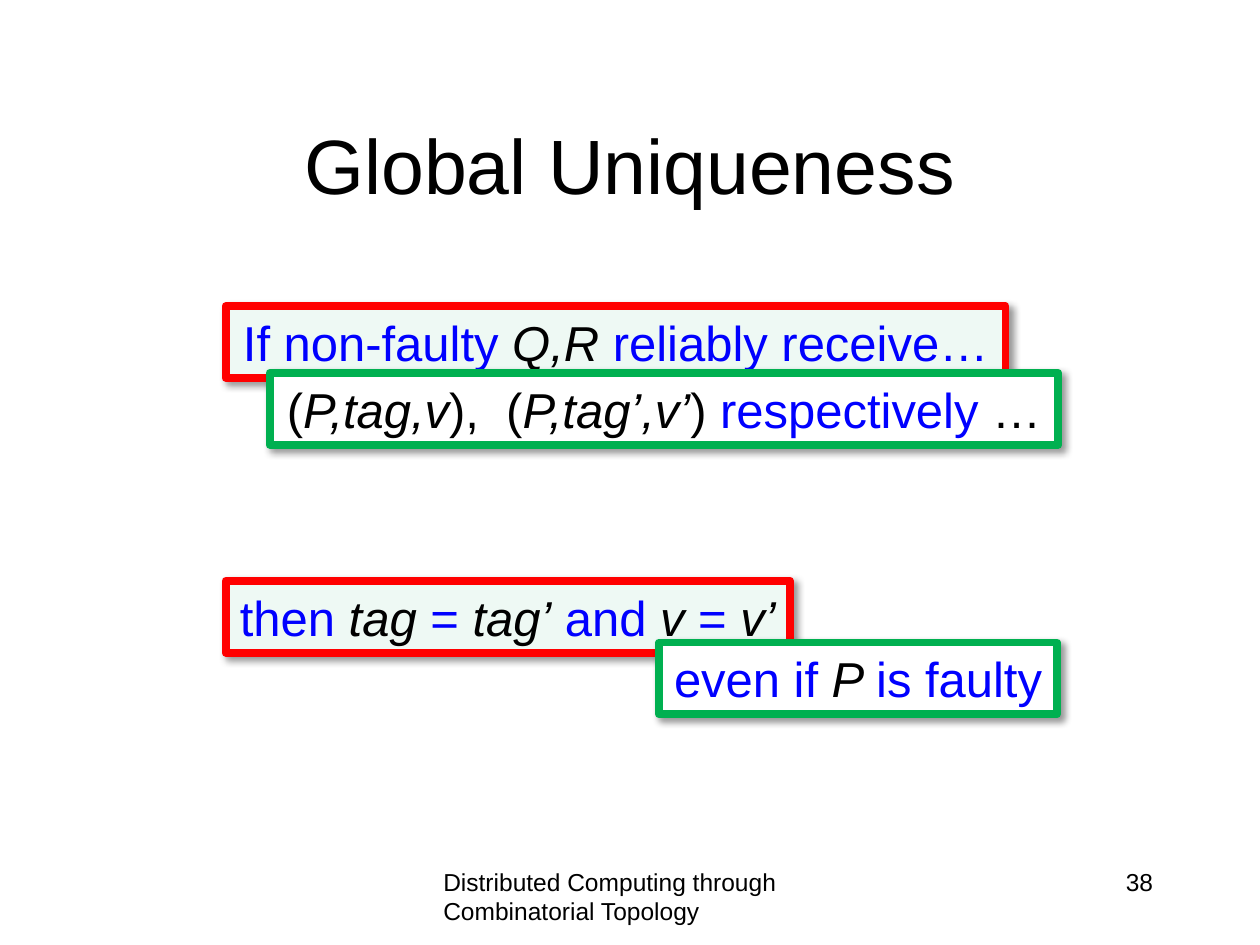
from dataclasses import dataclass

import pptx
import pptx.dml.color
import pptx.enum.shapes
import pptx.enum.text
import pptx.oxml
import pptx.oxml.ns
import pptx.util
from pptx.util import Inches

ALIGN = pptx.enum.text.PP_ALIGN
ANCHOR = pptx.enum.text.MSO_ANCHOR
BLACK, BLUE, RED, GREEN = "000000", "0000FF", "FF0000", "00B050"
MINT, WHITE = "EEF9F4", "FFFFFF"


@dataclass(frozen=True)
class Span:
    text: str
    color: str = BLACK
    italic: bool = False


@dataclass(frozen=True)
class Callout:
    left: float
    top: float
    width: float
    fill: str
    border: str
    spans: tuple[Span, ...]


def words(text: str) -> Span:
    return Span(text, BLUE)


def symbol(text: str) -> Span:
    return Span(text, italic=True)


CALLOUTS = (
    Callout(1.79, 2.43, 6.19, MINT, RED, (
        words("If non-faulty "), symbol("Q,R"), words(" reliably receive…"))),
    Callout(1.79, 4.61, 4.48, MINT, RED, (
        words("then "), symbol("tag"), words(" = "), symbol("tag’"),
        words(" and "), symbol("v"), words(" = "), symbol("v’"))),
    Callout(5.23, 5.1, 3.16, WHITE, GREEN, (
        words("even if "), symbol("P "), words("is faulty"))),
    Callout(2.14, 2.96, 6.26, WHITE, GREEN, (
        Span("("), symbol("P,tag,v"), Span("),  ("), symbol("P,tag’,v’"),
        Span(") "), words("respectively "), Span("…"))),
)


def rgb(color: str) -> pptx.dml.color.RGBColor:
    return pptx.dml.color.RGBColor.from_string(color)


def write(frame, *spans: Span, size: float, align=ALIGN.LEFT,
          anchor=ANCHOR.TOP, wrap: bool = True) -> None:
    frame.word_wrap = wrap
    frame.vertical_anchor = anchor
    para = frame.paragraphs[0]
    para.alignment = align
    for span in spans:
        run = para.add_run()
        run.text = span.text
        run.font.name = "Arial"
        run.font.size = pptx.util.Pt(size)
        run.font.italic = span.italic
        run.font.color.rgb = rgb(span.color)


def add_text(page, text: str, left: float, top: float, width: float,
             height: float, **style) -> None:
    box = page.shapes.add_textbox(
        Inches(left), Inches(top), Inches(width), Inches(height))
    write(box.text_frame, Span(text), **style)


def add_shadow(box) -> None:
    box.shadow.inherit = False
    effects = box._element.spPr.find(pptx.oxml.ns.qn("a:effectLst"))
    effects.append(pptx.oxml.parse_xml(
        f'<a:outerShdw {pptx.oxml.ns.nsdecls("a")} blurRad="{pptx.util.Pt(4)}" '
        f'dist="{pptx.util.Pt(3)}" dir="2700000" algn="tl" rotWithShape="0">'
        f'<a:srgbClr val="{BLACK}"><a:alpha val="40000"/></a:srgbClr>'
        '</a:outerShdw>'))


def add_callout(page, callout: Callout) -> None:
    box = page.shapes.add_shape(
        pptx.enum.shapes.MSO_SHAPE.RECTANGLE, Inches(callout.left),
        Inches(callout.top), Inches(callout.width), Inches(0.57))
    box.fill.solid()
    box.fill.fore_color.rgb = rgb(callout.fill)
    box.line.color.rgb = rgb(callout.border)
    box.line.width = pptx.util.Pt(4.5)
    add_shadow(box)
    write(box.text_frame, *callout.spans, size=28, align=ALIGN.CENTER, wrap=False)
    box.text_frame.auto_size = pptx.enum.text.MSO_AUTO_SIZE.SHAPE_TO_FIT_TEXT


def main() -> None:
    deck = pptx.Presentation()
    deck.slide_width, deck.slide_height = Inches(10), Inches(7.5)
    page = deck.slides.add_slide(deck.slide_layouts[6])
    add_text(page, "Global Uniqueness", 0.75, 0.67, 8.5, 1.25,
             size=44, align=ALIGN.CENTER, anchor=ANCHOR.MIDDLE)
    add_text(page, "Distributed Computing through Combinatorial Topology",
             3.42, 6.83, 3.17, 0.5, size=14)
    add_text(page, "38", 7.17, 6.83, 2.08, 0.5, size=14, align=ALIGN.RIGHT)
    for callout in CALLOUTS:
        add_callout(page, callout)
    deck.save("out.pptx")


if __name__ == "__main__":
    main()
